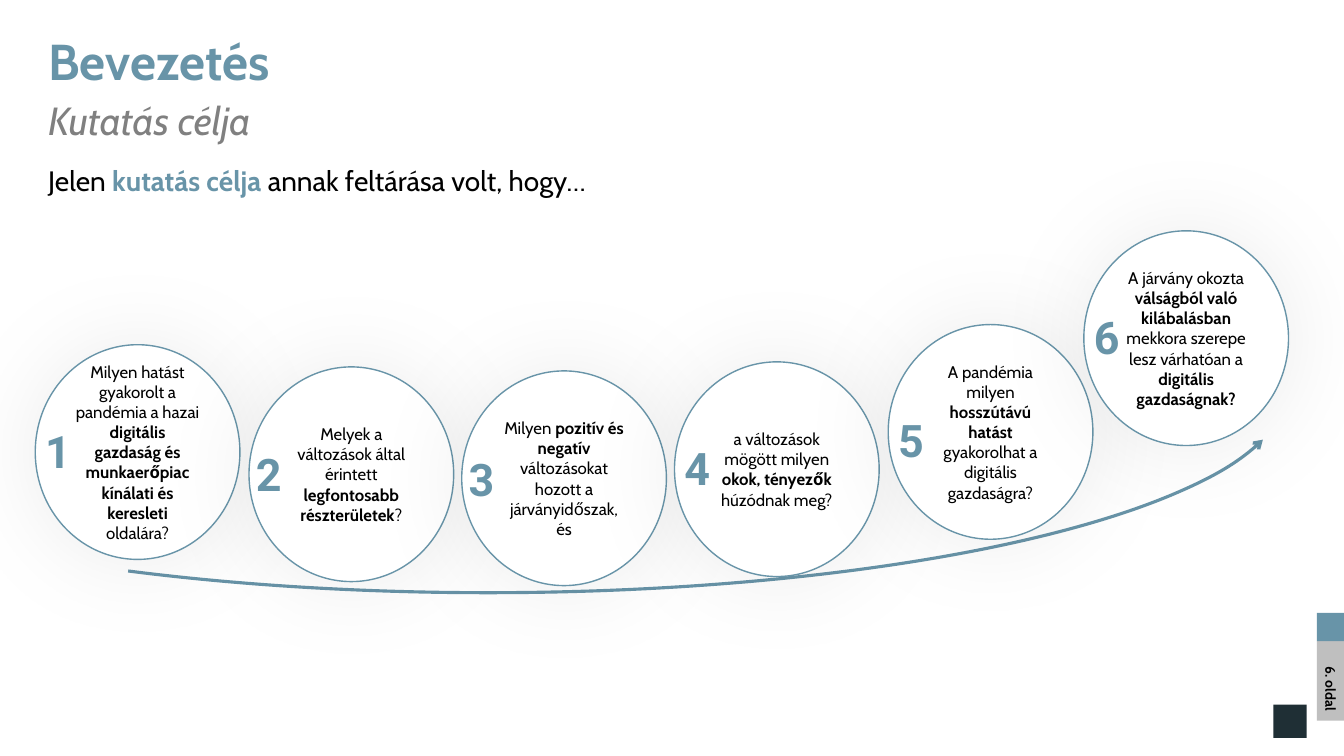
import pptx
import pptx.util
import pptx.dml.color
import pptx.enum.shapes
import pptx.enum.text
import pptx.oxml
import pptx.oxml.ns

Inches = pptx.util.Inches
Pt = pptx.util.Pt
RGBColor = pptx.dml.color.RGBColor
Shape = pptx.enum.shapes.MSO_SHAPE
Align = pptx.enum.text.PP_ALIGN
Anchor = pptx.enum.text.MSO_ANCHOR

BLUE = RGBColor(0x68, 0x94, 0xA8)
DARK = RGBColor(0x1F, 0x2F, 0x35)
GRAY = RGBColor(0x80, 0x80, 0x80)
SILVER = RGBColor(0xBF, 0xBF, 0xBF)
BLACK = RGBColor(0, 0, 0)
WHITE = RGBColor(255, 255, 255)

GOALS = [
    (0.35, 3.42, 0, 0.73, "Milyen hatást gyakorolt a pandémia a hazai *digitális gazdaság és "
     "munkaerőpiac kínálati és keresleti* oldalára?"),
    (2.47, 3.64, -0.03, 0.74, "Melyek a változások által érintett *legfontosabb részterületek*?"),
    (4.58, 3.68, -0.03, 0.75, "Milyen *pozitív és negatív *változásokat hozott a járványidőszak, és"),
    (6.69, 3.59, 0, 0.73, "a változások mögött milyen *okok, tényezők *húzódnak meg?"),
    (8.81, 3.22, 0, 0.83, "A pandémia milyen *hosszútávú hatást *gyakorolhat a digitális gazdaságra?"),
    (10.75, 2.29, 0, 0.73, "A járvány okozta *válságból való kilábalásban *mekkora szerepe lesz "
     "várhatóan a *digitális gazdaságnak?*"),
]


def write(shape, text, size, font="Cabin", color=BLACK, accent=None, bold=False,
          italic=False, align=Align.LEFT, anchor=Anchor.TOP, spacing=None):
    frame = shape.text_frame
    frame.word_wrap = True
    frame.auto_size = pptx.enum.text.MSO_AUTO_SIZE.NONE
    frame.vertical_anchor = anchor
    para = frame.paragraphs[0]
    para.alignment = align
    para.line_spacing = spacing
    for index, part in enumerate(text.split("*")):
        if part:
            strong = index % 2 == 1
            run = para.add_run()
            run.text = part
            run.font.name = font
            run.font.size = Pt(size)
            run.font.bold = bold or strong
            run.font.italic = italic
            run.font.color.rgb = accent if strong and accent else color


def add_label(slide, left, top, width, height, text, size, **style):
    box = slide.shapes.add_textbox(Inches(left), Inches(top), Inches(width), Inches(height))
    write(box, text, size, **style)


def add_block(slide, kind, left, top, width, height, fill):
    block = slide.shapes.add_shape(kind, Inches(left), Inches(top), Inches(width), Inches(height))
    block.shadow.inherit = False
    block.fill.solid()
    block.fill.fore_color.rgb = fill
    block.line.fill.background()
    return block


def add_head(slide, left, top, width):
    title = slide.shapes.title
    title.left, title.top = Inches(left), Inches(top)
    title.width, title.height = Inches(width), Inches(1.11)
    write(title, "Bevezetés", 36, color=BLUE, bold=True, spacing=0.9)
    add_label(slide, left, top + 1.25, 12.58, 0.9,
              "Jelen *kutatás célja *annak feltárása volt, hogy…", 20,
              accent=BLUE, align=Align.JUSTIFY)
    add_label(slide, left, top + 0.62, width, 0.49, "Kutatás célja", 28,
              color=GRAY, italic=True, align=Align.JUSTIFY, anchor=Anchor.MIDDLE)


def add_arc(slide, left, top, width, height):
    arc = slide.shapes.add_shape(Shape.ARC, Inches(left), Inches(top), Inches(width), Inches(height))
    arc.shadow.inherit = False
    arc.adjustments[0] = 124.056
    arc.adjustments[1] = 213.782
    arc.rotation = 180
    arc.fill.background()
    arc.line.color.rgb = BLUE
    arc.line.width = Pt(2.25)
    arc._element.spPr.xfrm.set("flipH", "1")
    arc.line._get_or_add_ln().append(pptx.oxml.parse_xml(
        f'<a:tailEnd {pptx.oxml.ns.nsdecls("a")} type="arrow"/>'))


def add_glow(shape):
    shape._element.spPr.find(pptx.oxml.ns.qn("a:effectLst")).append(pptx.oxml.parse_xml(
        f'<a:outerShdw {pptx.oxml.ns.nsdecls("a")} blurRad="{Pt(70)}" dist="0" dir="0" '
        'algn="ctr" rotWithShape="0"><a:srgbClr val="000000"><a:alpha val="7000"/>'
        '</a:srgbClr></a:outerShdw>'))


def add_goal(slide, left, top, text):
    disc = add_block(slide, Shape.OVAL, left, top, 2.03, 2.13, WHITE)
    disc.line.color.rgb = BLUE
    disc.line.width = Pt(1)
    add_glow(disc)
    write(disc, text, 12, align=Align.CENTER, anchor=Anchor.MIDDLE)


def add_goals(slide):
    for left, top, shift, drop, text in GOALS:
        add_goal(slide, left, top, text)
    for number, (left, top, shift, drop, text) in enumerate(GOALS, 1):
        add_label(slide, left + shift, top + drop, 0.69, 0.66, str(number), 32,
                  font="Roboto", color=BLUE, bold=True)


def add_tab(slide, left, top, width):
    page = add_block(slide, Shape.RECTANGLE, left, top + width, width, 0.79, SILVER)
    write(page, "6. oldal", 10, bold=True, align=Align.RIGHT, anchor=Anchor.MIDDLE)
    page.text_frame._txBody.bodyPr.set("vert", "vert")
    add_block(slide, Shape.RECTANGLE, left, top, width, width, BLUE)


def main():
    deck = pptx.Presentation()
    deck.slide_width, deck.slide_height = Inches(13.33), Inches(7.5)
    slide = deck.slides.add_slide(deck.slide_layouts[5])
    add_block(slide, Shape.RECTANGLE, 12.63, 6.99, 0.33, 0.33, DARK)
    add_head(slide, 0.38, 0.32, 9.71)
    add_arc(slide, -3.09, 1.85, 15.86, 4.03)
    add_goals(slide)
    add_tab(slide, 13.06, 6.08, 0.28)
    deck.save("out.pptx")


if __name__ == "__main__":
    main()
